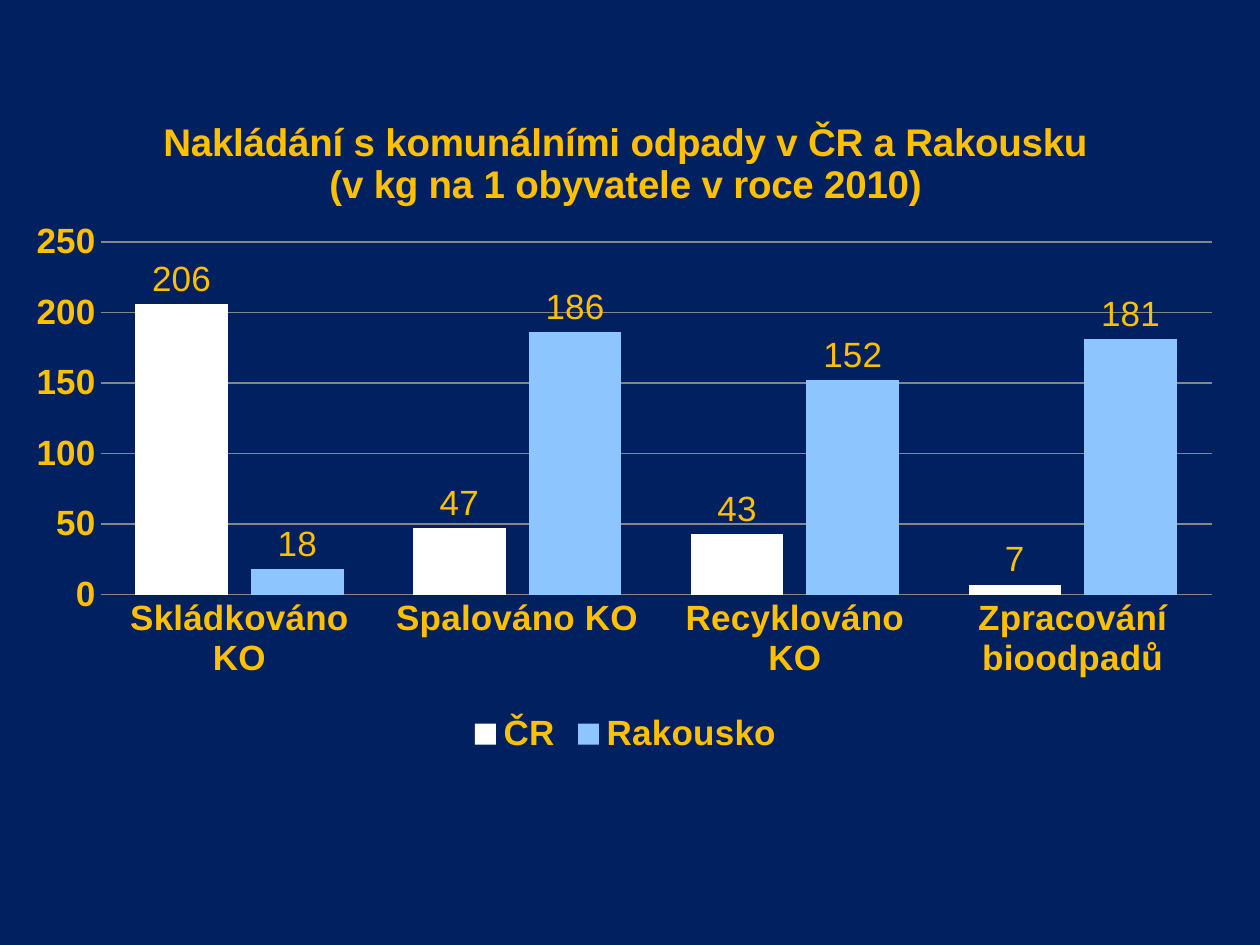
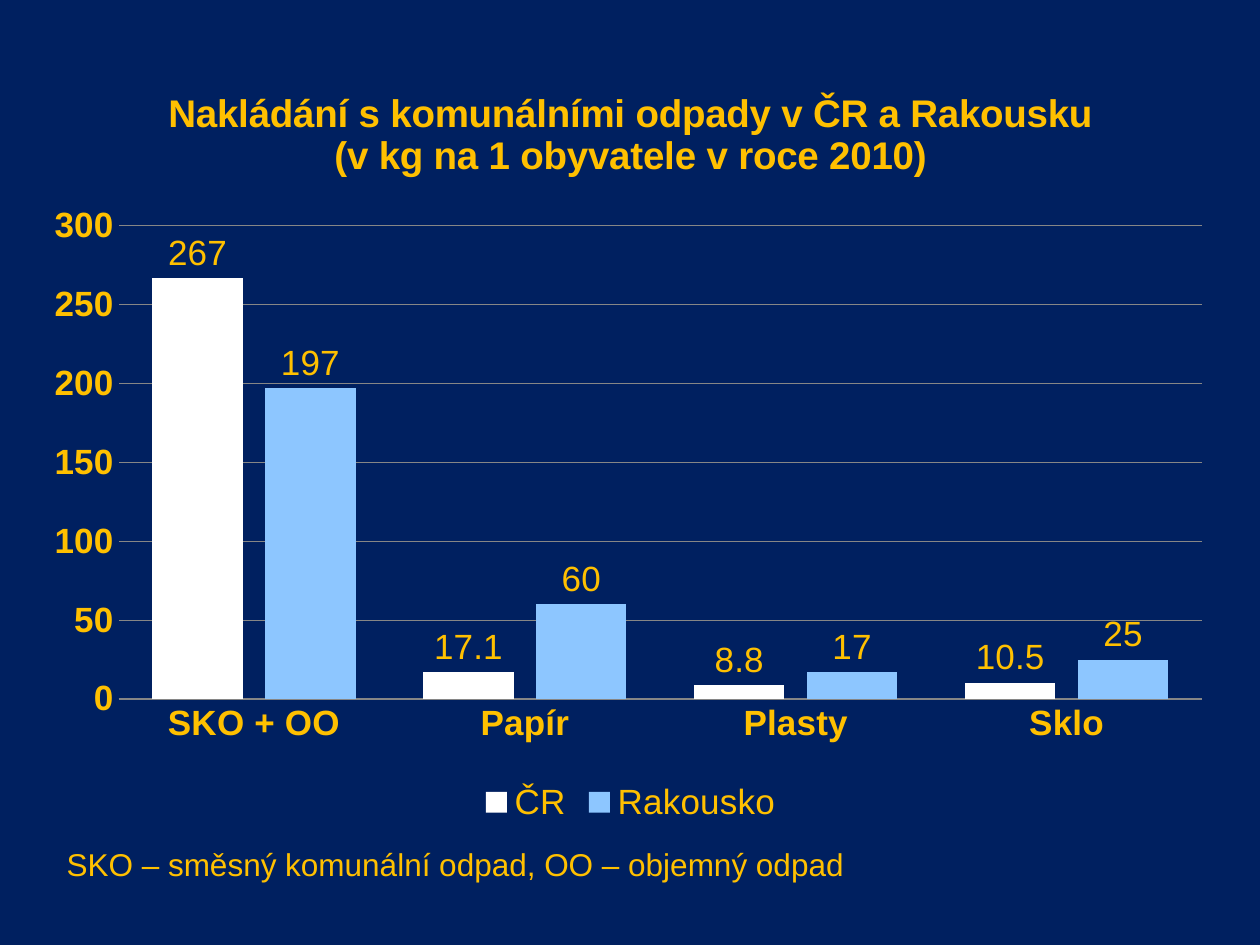
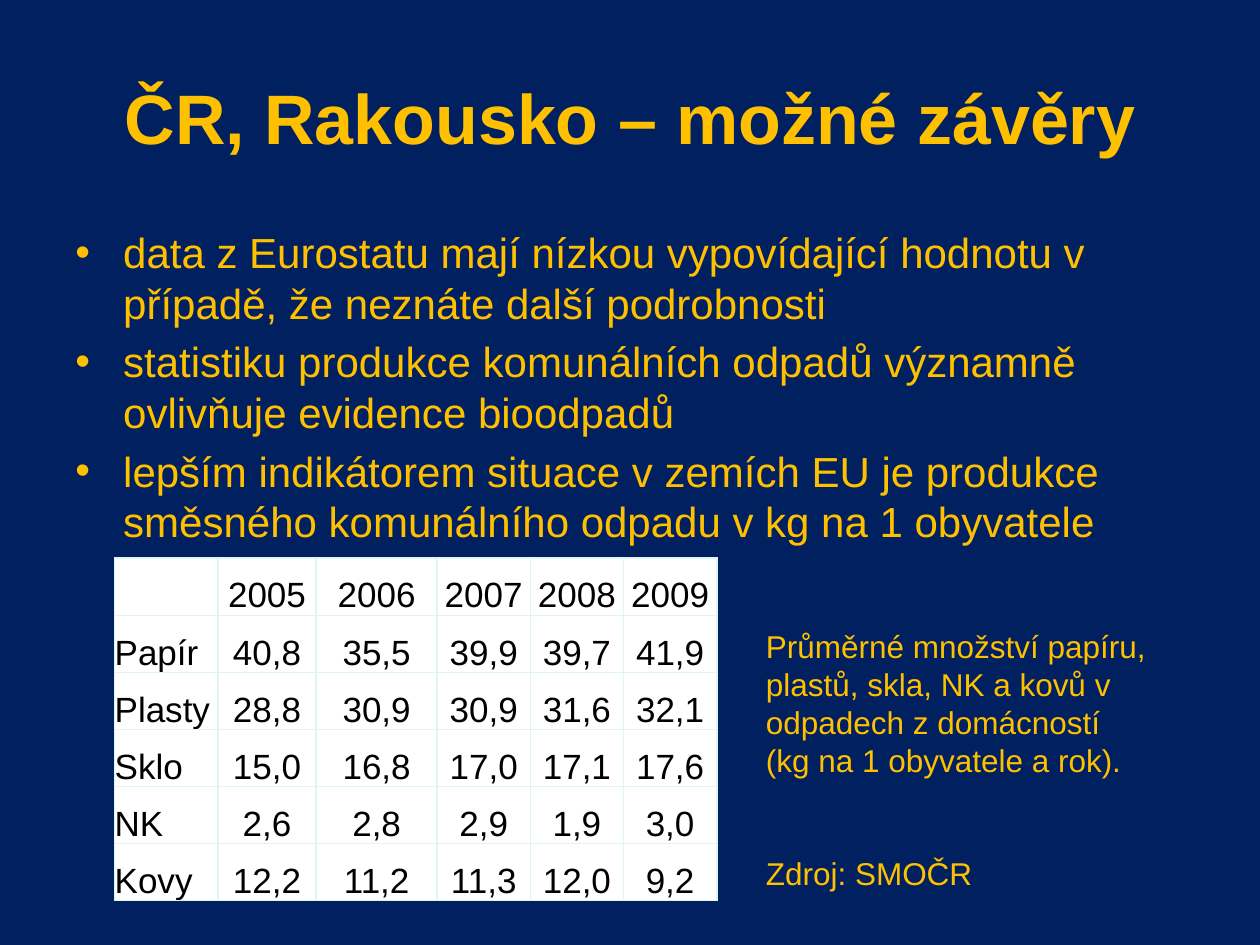
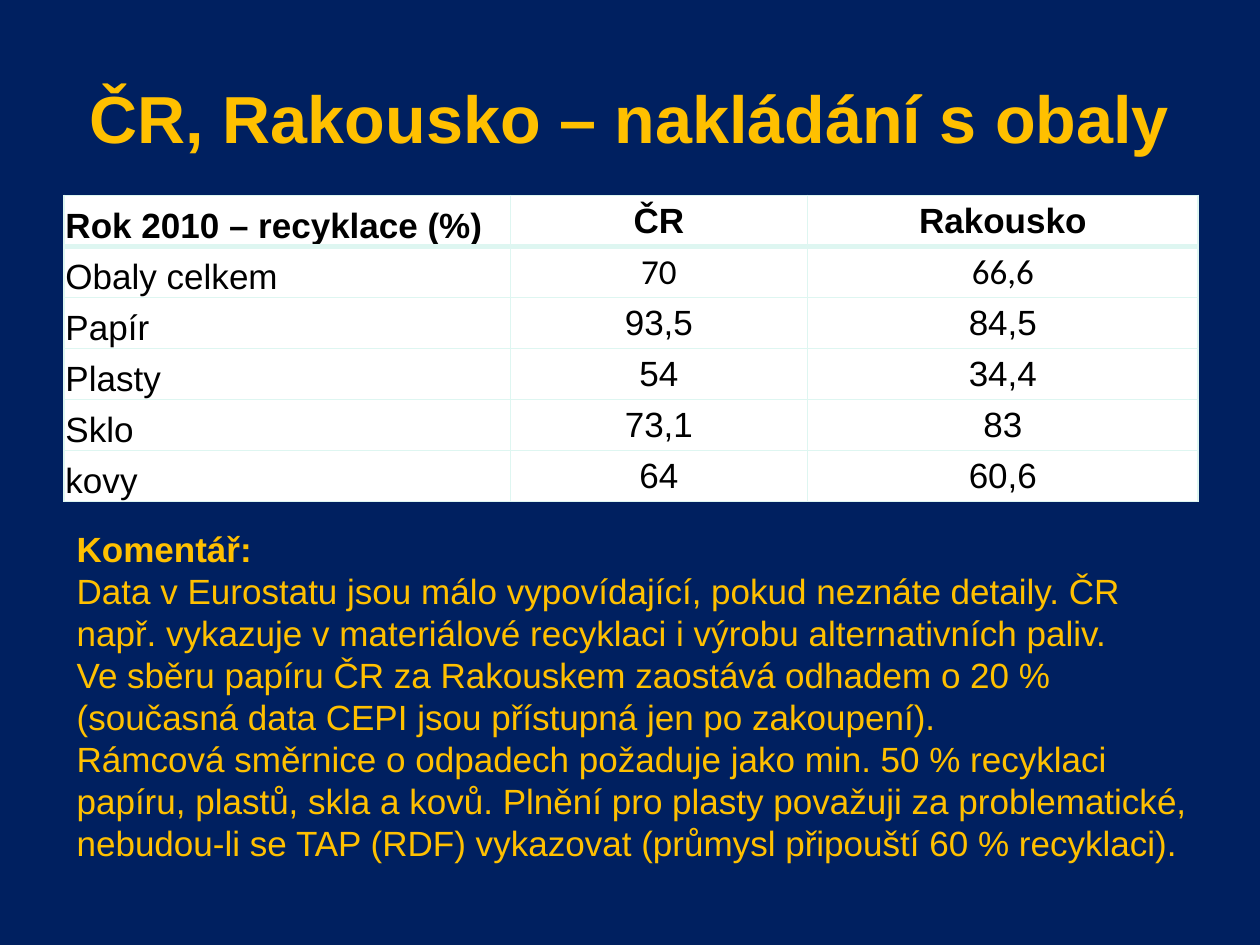
from dataclasses import dataclass

from lxml import etree
from pptx import Presentation
from pptx import util as u
from pptx.chart.data import CategoryChartData
from pptx.dml.color import RGBColor
from pptx.enum import chart as charts
from pptx.enum import text
from pptx.oxml import ns

PX = u.Inches(1) // 100  # one px is a hundredth of an inch

NAVY = RGBColor(0x00, 0x20, 0x60)
GOLD = RGBColor(0xFF, 0xC0, 0x00)
WHITE = RGBColor(0xFF, 0xFF, 0xFF)
BLACK = RGBColor(0x00, 0x00, 0x00)
SKY = RGBColor(0x8D, 0xC6, 0xFF)
GREY = RGBColor(0x86, 0x86, 0x86)
MINT = RGBColor(0xDE, 0xF6, 0xF1)

FONT = "Arial"
COUNTRIES = ("ČR", "Rakousko")
COUNTRY_COLOURS = (WHITE, SKY)
CHART_TITLE = ("Nakládání s komunálními odpady v ČR a Rakousku", "(v kg na 1 obyvatele v roce 2010)")
LEFT, CENTRE = text.PP_ALIGN.LEFT, text.PP_ALIGN.CENTER
BOTTOM, MIDDLE, TOP = text.MSO_ANCHOR.BOTTOM, text.MSO_ANCHOR.MIDDLE, text.MSO_ANCHOR.TOP


@dataclass(frozen=True)
class Box:
    left: int
    top: int
    width: int
    height: int

    def emu(self) -> list:
        return [u.Emu(side * PX) for side in (self.left, self.top, self.width, self.height)]


TITLE_BOX = Box(50, 30, 900, 125)


@dataclass(frozen=True)
class WasteChart:
    box: Box
    plot: tuple  # x, y, w, h as shares of the chart
    categories: tuple
    values: tuple  # one row for each country
    top_value: int
    bold_legend: bool


@dataclass(frozen=True)
class WasteTable:
    box: Box
    columns: tuple
    rows: tuple
    value_anchor: text.MSO_ANCHOR
    inset: int = 0
    bold_header: bool = False


WASTE_HANDLING = WasteChart(
    box=Box(12, 76, 969, 528),
    plot=(0.07, 0.22, 0.91, 0.53),
    categories=("Skládkováno KO", "Spalováno KO", "Recyklováno KO", "Zpracování bioodpadů"),
    values=((206, 47, 43, 7), (18, 186, 152, 181)),
    top_value=250,
    bold_legend=True,
)
WASTE_KINDS = WasteChart(
    box=Box(28, 52, 945, 606),
    plot=(0.07, 0.21, 0.91, 0.62),
    categories=("SKO + OO", "Papír", "Plasty", "Sklo"),
    values=((267, 17.1, 8.8, 10.5), (197, 60, 17, 25)),
    top_value=300,
    bold_legend=False,
)
HOUSEHOLD_WASTE = WasteTable(
    box=Box(91, 443, 480, 272),
    columns=(82, 78, 96, 74, 74, 74),
    rows=(
        ("", "2005", "2006", "2007", "2008", "2009"),
        ("Papír", "40,8", "35,5", "39,9", "39,7", "41,9"),
        ("Plasty", "28,8", "30,9", "30,9", "31,6", "32,1"),
        ("Sklo", "15,0", "16,8", "17,0", "17,1", "17,6"),
        ("NK", "2,6", "2,8", "2,9", "1,9", "3,0"),
        ("Kovy", "12,2", "11,2", "11,3", "12,0", "9,2"),
    ),
    value_anchor=BOTTOM,
)
PACKAGING = WasteTable(
    box=Box(51, 155, 900, 243),
    columns=(354, 236, 310),
    rows=(
        ("Rok 2010 – recyklace (%)", *COUNTRIES),
        ("Obaly celkem", "70", "66,6"),
        ("Papír", "93,5", "84,5"),
        ("Plasty", "54", "34,4"),
        ("Sklo", "73,1", "83"),
        ("kovy", "64", "60,6"),
    ),
    value_anchor=MIDDLE,
    inset=1,
    bold_header=True,
)


def style_font(font, size: int, colour: RGBColor = GOLD, bold: bool = False, name: str = FONT) -> None:
    font.size = u.Pt(size)
    font.color.rgb = colour
    font.bold = bold
    font.name = name


def fill_frame(frame, lines, size: int, bold: bool = False, align=LEFT) -> None:
    """Write one paragraph for each line and format its runs."""
    frame.text = "\n".join(lines)
    for para in frame.paragraphs:
        para.alignment = align
        for span in para.runs:
            style_font(span.font, size, bold=bold)


def add_text(page, box: Box, lines, size: int, bold: bool = False, align=LEFT, anchor=TOP, grow: bool = True):
    frame = page.shapes.add_textbox(*box.emu()).text_frame
    frame.word_wrap = True
    frame.vertical_anchor = anchor
    frame.auto_size = text.MSO_AUTO_SIZE.SHAPE_TO_FIT_TEXT if grow else text.MSO_AUTO_SIZE.NONE
    fill_frame(frame, lines, size, bold, align)
    return frame


def add_title(page, title: str, size: int) -> None:
    add_text(page, TITLE_BOX, [title], size, True, CENTRE, MIDDLE, grow=False)


def add_bullet(para) -> None:
    para.space_before = u.Pt(4.8)
    props = para._p.get_or_add_pPr()
    props.set("marL", str(38 * PX))
    props.set("indent", str(-38 * PX))
    etree.SubElement(props, ns.qn("a:buFont"), typeface=FONT)
    etree.SubElement(props, ns.qn("a:buChar"), char="•")


def place_plot(chart, shares) -> None:
    """Fix the inner plot area at the given shares of the chart."""
    area = chart.plots[0]._element.getparent()
    for old in area.findall(ns.qn("c:layout")):
        area.remove(old)
    layout = etree.Element(ns.qn("c:layout"))
    manual = etree.SubElement(layout, ns.qn("c:manualLayout"))
    settings = [("layoutTarget", "inner"), ("xMode", "edge"), ("yMode", "edge")]
    settings += zip("xywh", shares)
    for tag, value in settings:
        etree.SubElement(manual, ns.qn(f"c:{tag}"), val=str(value))
    area.insert(0, layout)


def style_line(line) -> None:
    line.color.rgb = GREY
    line.width = u.Pt(0.75)


def add_waste_chart(page, info: WasteChart) -> None:
    data = CategoryChartData()
    data.categories = info.categories
    for country, values in zip(COUNTRIES, info.values):
        data.add_series(country, values)
    kind = charts.XL_CHART_TYPE.COLUMN_CLUSTERED
    chart = page.shapes.add_chart(kind, *info.box.emu(), data).chart
    style_font(chart.font, 20)
    chart.has_title = True
    fill_frame(chart.chart_title.text_frame, CHART_TITLE, 22, True, CENTRE)
    chart.chart_title.include_in_layout = False

    chart.has_legend = True
    chart.legend.position = charts.XL_LEGEND_POSITION.BOTTOM
    chart.legend.include_in_layout = False
    style_font(chart.legend.font, 20, bold=info.bold_legend)

    for axis in (chart.category_axis, chart.value_axis):
        axis.major_tick_mark = axis.minor_tick_mark = charts.XL_TICK_MARK.NONE
        style_font(axis.tick_labels.font, 20, bold=True)
    style_line(chart.category_axis.format.line)
    scale = chart.value_axis
    scale.minimum_scale, scale.maximum_scale, scale.major_unit = 0, info.top_value, 50
    scale.format.line.fill.background()
    scale.has_major_gridlines = True
    style_line(scale.major_gridlines.format.line)

    plot = chart.plots[0]
    plot.gap_width, plot.overlap = 75, -25
    plot.vary_by_categories = False
    for series, colour in zip(plot.series, COUNTRY_COLOURS):
        series.format.fill.solid()
        series.format.fill.fore_color.rgb = colour
        labels = series.data_labels
        labels.show_value = True
        labels.position = charts.XL_LABEL_POSITION.OUTSIDE_END
        style_font(labels.font, 20)
    place_plot(chart, info.plot)


def border_cell(cell, top: int, bottom: int) -> None:
    """Draw the four borders, with the top and bottom widths in points."""
    props = cell._tc.get_or_add_tcPr()
    for side, width in (("L", 1), ("R", 1), ("T", top), ("B", bottom)):
        line = etree.SubElement(props, ns.qn(f"a:ln{side}"), w=str(u.Pt(width)))
        fill = etree.SubElement(line, ns.qn("a:solidFill"))
        etree.SubElement(fill, ns.qn("a:srgbClr"), val=str(MINT))


def add_waste_table(page, info: WasteTable):
    shape = page.shapes.add_table(len(info.rows), len(info.columns), *info.box.emu())
    table = shape.table
    table.first_row = table.horz_banding = False
    for column, width in zip(table.columns, info.columns):
        column.width = u.Emu(width * PX)
    header_line = 3 if info.bold_header else 1
    for r, values in enumerate(info.rows):
        table.rows[r].height = u.Emu(info.box.height * PX // len(info.rows))
        for c, value in enumerate(values):
            cell = table.cell(r, c)
            border_cell(cell, header_line if r == 1 else 1, header_line if r == 0 else 1)
            cell.fill.solid()
            cell.fill.fore_color.rgb = WHITE
            cell.margin_left = cell.margin_right = cell.margin_top = u.Emu(info.inset * PX)
            cell.margin_bottom = 0
            cell.vertical_anchor = info.value_anchor if c else BOTTOM
            cell.text_frame.text = value
            para = cell.text_frame.paragraphs[0]
            para.alignment = CENTRE if c else LEFT
            style_font(para.font, 20, BLACK)
            for span in para.runs:
                style_font(span.font, 20, BLACK, info.bold_header and r == 0)
    return table


def build_conclusions(page) -> None:
    add_title(page, "ČR, Rakousko – možné závěry", 40)
    findings = (
        "data z Eurostatu mají nízkou vypovídající hodnotu v případě, že neznáte další podrobnosti",
        "statistiku produkce komunálních odpadů významně ovlivňuje evidence bioodpadů",
        "lepším indikátorem situace v zemích EU je produkce směsného komunálního odpadu "
        "v kg na 1 obyvatele",
    )
    body = add_text(page, Box(50, 175, 900, 531), findings, 24, grow=False)
    for para in body.paragraphs:
        add_bullet(para)
    add_waste_table(page, HOUSEHOLD_WASTE)
    caption = (
        "Průměrné množství papíru, plastů, skla, NK a kovů v odpadech z domácností",
        "(kg na 1 obyvatele a rok).",
        "Zdroj: SMOČR",
    )
    note = add_text(page, Box(598, 493, 331, 222), caption, 18)
    note.paragraphs[-1].space_before = u.Pt(43)


def build_packaging(page) -> None:
    add_title(page, "ČR, Rakousko – nakládání s obaly", 38)
    table = add_waste_table(page, PACKAGING)
    for c in (1, 2):
        table.cell(1, c).text_frame.paragraphs[0].runs[0].font.name = "Calibri"
    comment = (
        "Komentář:",
        "Data v Eurostatu jsou málo vypovídající, pokud neznáte detaily. ČR např. vykazuje "
        "v materiálové recyklaci i výrobu alternativních paliv.",
        "Ve sběru papíru ČR za Rakouskem zaostává odhadem o 20 % (současná data CEPI jsou "
        "přístupná jen po zakoupení).",
        "Rámcová směrnice o odpadech požaduje jako min. 50 % recyklaci papíru, plastů, skla "
        "a kovů. Plnění pro plasty považuji za problematické, nebudou-li se TAP (RDF) "
        "vykazovat (průmysl připouští 60 % recyklaci).",
    )
    frame = add_text(page, Box(51, 414, 906, 279), comment, 20)
    frame.paragraphs[0].runs[0].font.bold = True


def main() -> None:
    deck = Presentation()
    deck.slide_width, deck.slide_height = u.Emu(1000 * PX), u.Emu(750 * PX)
    backdrop = deck.slide_master.background.fill
    backdrop.solid()
    backdrop.fore_color.rgb = NAVY
    handling, kinds, conclusions, packaging = (
        deck.slides.add_slide(deck.slide_layouts[6]) for _ in range(4)
    )
    add_waste_chart(handling, WASTE_HANDLING)
    add_waste_chart(kinds, WASTE_KINDS)
    add_text(kinds, Box(43, 666, 709, 40), ["SKO – směsný komunální odpad, OO – objemný odpad"], 18)
    build_conclusions(conclusions)
    build_packaging(packaging)
    deck.save("out.pptx")


if __name__ == "__main__":
    main()
